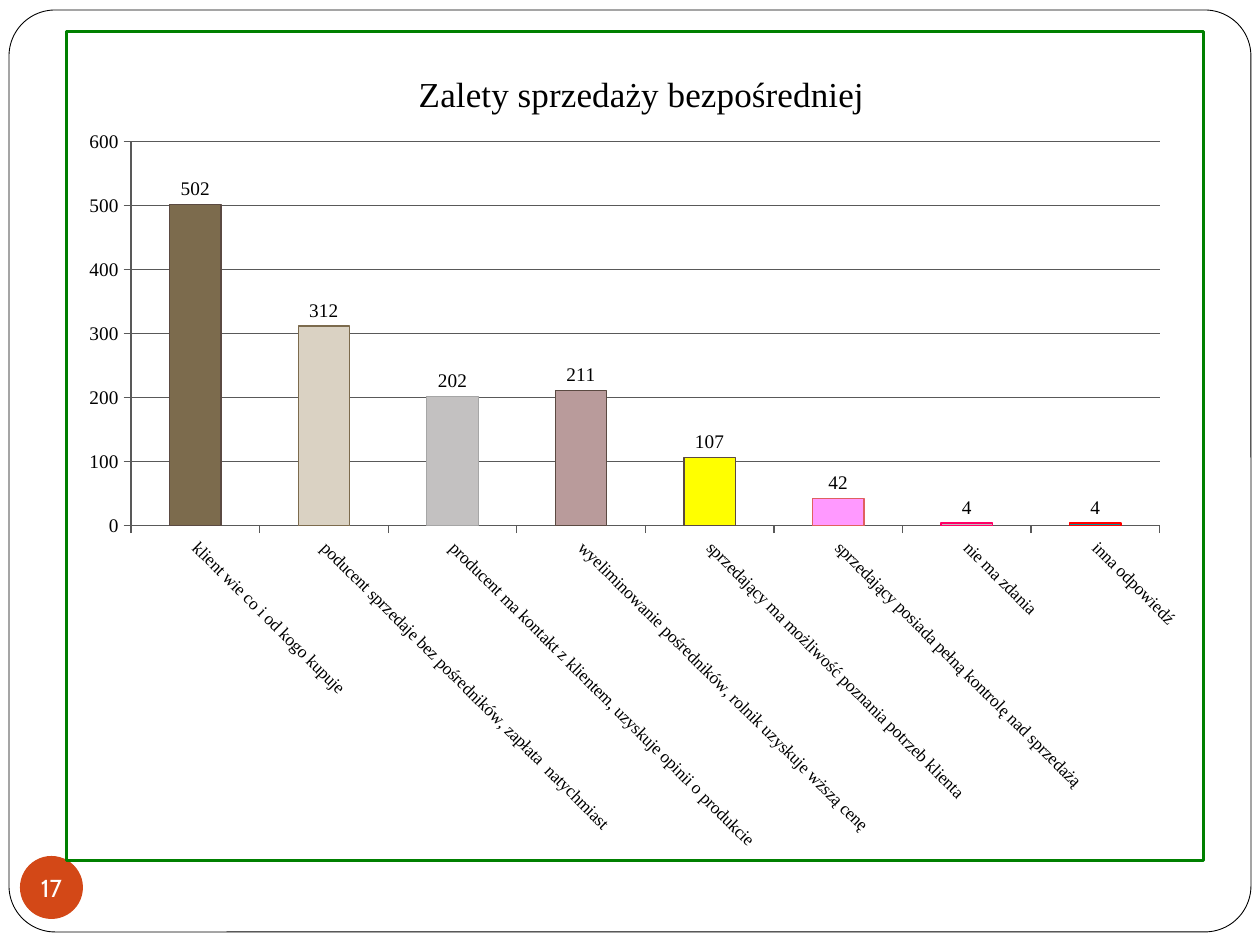
from dataclasses import dataclass

import pptx
import pptx.chart.data
import pptx.dml.color
import pptx.enum.chart
import pptx.enum.shapes
import pptx.enum.text
import pptx.oxml
import pptx.oxml.ns
import pptx.util

EMU_PER_PX = 914400 / 126


@dataclass(frozen=True)
class Theme:
    paper: str = "FFFFFF"
    ink: str = "000000"
    accent: str = "D34817"
    border: str = "008000"
    grid: str = "595959"
    chart_font: str = "Times New Roman"
    badge_font: str = "Cabin"
    title_size: int = 20
    badge_size: int = 14
    label_size: int = 11
    category_size: int = 10


def px(length):
    return pptx.util.Emu(round(length * EMU_PER_PX))


def rgb(code):
    return pptx.dml.color.RGBColor.from_string(code)


def chart_xml(text):
    return pptx.oxml.parse_xml(text.replace(">", " " + pptx.oxml.ns.nsdecls("c", "a") + ">", 1))


class SlideBuilder:
    def __init__(self, slide, theme):
        self.slide = slide
        self.theme = theme

    def style_font(self, font, name, size, color):
        font.name = name
        font.size = pptx.util.Pt(size)
        font.color.rgb = rgb(color)

    def style_line(self, line, color, width):
        line.color.rgb = rgb(color)
        line.width = pptx.util.Pt(width)

    def shape(self, kind, box, fill, line=None):
        shape = self.slide.shapes.add_shape(kind, *map(px, box))
        shape.shadow.inherit = False
        shape.fill.solid()
        shape.fill.fore_color.rgb = rgb(fill)
        if line:
            self.style_line(shape.line, line, 0.5)
        else:
            shape.line.fill.background()
        return shape

    def badge(self, box, text):
        frame = self.shape(pptx.enum.shapes.MSO_SHAPE.OVAL, box, self.theme.accent).text_frame
        frame.margin_left = frame.margin_right = frame.margin_top = frame.margin_bottom = 0
        frame.word_wrap = False
        frame.vertical_anchor = pptx.enum.text.MSO_ANCHOR.MIDDLE
        frame.text = text
        number = frame.paragraphs[0]
        number.alignment = pptx.enum.text.PP_ALIGN.CENTER
        self.style_font(number.runs[0].font, self.theme.badge_font,
                        self.theme.badge_size, self.theme.paper)

    def layout(self, parent, index, box, frame, inner=False):
        """Place a chart part at a slide position, as fractions of the chart frame."""
        for old in parent.findall(pptx.oxml.ns.qn("c:layout")):
            parent.remove(old)
        left, top, width, height = frame
        values = {"x": (box[0] - left) / width, "y": (box[1] - top) / height}
        target = ""
        if inner:
            values.update(w=box[2] / width, h=box[3] / height)
            target = '<c:layoutTarget val="inner"/>'
        modes = '<c:xMode val="edge"/><c:yMode val="edge"/>'
        places = "".join(f'<c:{key} val="{value:.4f}"/>' for key, value in values.items())
        parent.insert(index, chart_xml(
            f"<c:layout><c:manualLayout>{target}{modes}{places}</c:manualLayout></c:layout>"))

    def column_chart(self, box, plot, title_at, title, bars):
        theme = self.theme
        data = pptx.chart.data.CategoryChartData(number_format="0")
        data.categories = [name for name, *_ in bars]
        data.add_series(title, [value for _, value, *_ in bars])
        chart = self.slide.shapes.add_chart(
            pptx.enum.chart.XL_CHART_TYPE.COLUMN_CLUSTERED, *map(px, box), data).chart
        chart.has_legend = False
        self.style_font(chart.font, theme.chart_font, theme.label_size, theme.ink)

        # Title
        chart.has_title = True
        heading = chart.chart_title.text_frame
        heading.text = title
        heading_font = heading.paragraphs[0].runs[0].font
        self.style_font(heading_font, theme.chart_font, theme.title_size, theme.ink)
        heading_font.bold = False
        chart.chart_title.include_in_layout = False

        # Axes
        values, categories = chart.value_axis, chart.category_axis
        values.minimum_scale, values.maximum_scale, values.major_unit = 0, 600, 100
        values.has_major_gridlines = True
        self.style_line(values.major_gridlines.format.line, theme.grid, 0.75)
        values.tick_labels.number_format = "0"
        values.tick_labels.number_format_is_linked = False
        for axis, size in ((values, theme.label_size), (categories, theme.category_size)):
            axis.major_tick_mark = pptx.enum.chart.XL_TICK_MARK.OUTSIDE
            self.style_line(axis.format.line, theme.grid, 0.75)
            self.style_font(axis.tick_labels.font, theme.chart_font, size, theme.ink)
        slant = categories._element.find(".//" + pptx.oxml.ns.qn("a:bodyPr"))
        slant.set("rot", "2700000")
        slant.set("vert", "horz")

        # Columns and their values
        columns = chart.plots[0]
        columns.gap_width = 150
        columns.vary_by_categories = False
        columns.has_data_labels = True
        labels = columns.data_labels
        labels.show_value = True
        labels.number_format = "0"
        labels.number_format_is_linked = False
        labels.position = pptx.enum.chart.XL_LABEL_POSITION.OUTSIDE_END
        self.style_font(labels.font, theme.chart_font, theme.label_size, theme.ink)
        series = columns.series[0]
        series.invert_if_negative = False
        series.format.fill.solid()
        series.format.fill.fore_color.rgb = rgb(theme.accent)
        for index, (_, _, fill, outline) in enumerate(bars):
            look = series.points[index].format
            look.fill.solid()
            look.fill.fore_color.rgb = rgb(fill)
            self.style_line(look.line, outline, 0.75)

        # Positions and frame
        space = chart._chartSpace
        self.layout(space.chart.plotArea, 0, plot, box, inner=True)
        self.layout(chart.chart_title._element, 1, title_at, box)
        space.chart.addnext(chart_xml(
            f'<c:spPr><a:solidFill><a:srgbClr val="{theme.paper}"/></a:solidFill>'
            f'<a:ln w="{pptx.util.Pt(1.5)}"><a:solidFill><a:srgbClr val="{theme.border}"/>'
            "</a:solidFill></a:ln></c:spPr>"))


# Category, value, fill, outline
ADVANTAGES = [
    ("klient wie co i od kogo kupuje", 502, "7C6B4D", "5B4A42"),
    ("poducent sprzedaje bez pośredników, zapłata  natychmiast", 312, "DAD2C3", "7C6B4D"),
    ("producent ma kontakt z klientem, uzyskuje opinii o produkcie", 202, "C3C1C1", "A6A6A6"),
    ("wyeliminowanie pośredników, rolnik uzyskuje wższą cenę", 211, "B99B9B", "5B4A42"),
    ("sprzedający ma możliwość poznania potrzeb klienta", 107, "FFFF00", "5B4A42"),
    ("sprzedający posiada pełną kontrolę nad sprzedażą", 42, "FF99FF", "E06060"),
    ("nie ma zdania", 4, "BFBFBF", "FF0066"),
    ("inna odpowiedź", 4, "009999", "FF0000"),
]


def main():
    theme = Theme()
    deck = pptx.Presentation()
    deck.slide_width, deck.slide_height = px(1260), px(945)
    builder = SlideBuilder(deck.slides.add_slide(deck.slide_layouts[6]), theme)

    # Rounded page frame and page number
    page = builder.shape(pptx.enum.shapes.MSO_SHAPE.ROUNDED_RECTANGLE,
                         (9, 10, 1242, 922), theme.paper, theme.ink)
    page.adjustments[0] = 0.05
    builder.badge((20, 856, 63, 63), "17")

    # Survey chart
    builder.column_chart((65, 30, 1140, 832), (130, 141, 1031, 385), (412, 64),
                         "Zalety sprzedaży bezpośredniej", ADVANTAGES)
    deck.save("out.pptx")


if __name__ == "__main__":
    main()
